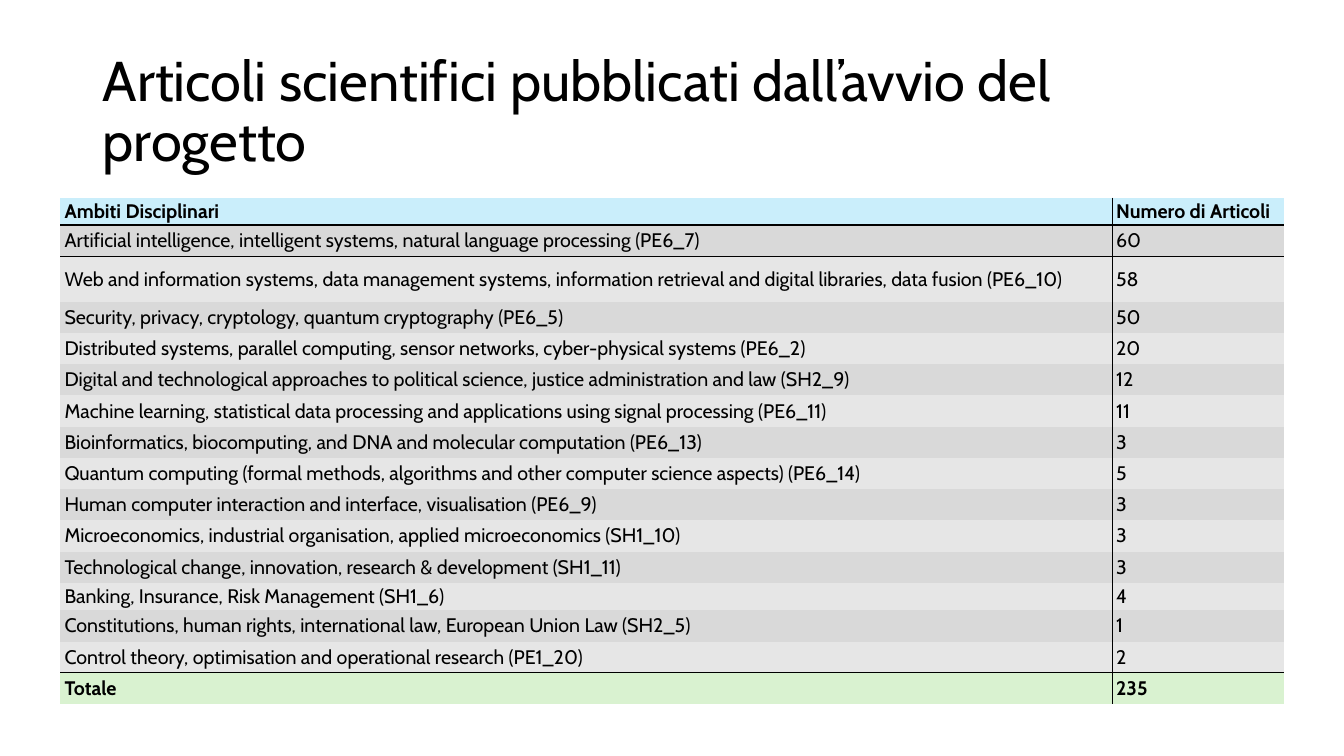
from dataclasses import dataclass

from lxml import etree
from pptx import Presentation
from pptx import util as u
from pptx.dml.color import RGBColor
from pptx.enum import text
from pptx.oxml.ns import qn


@dataclass(frozen=True)
class Theme:
    font: str = "Cabin"
    title_size: int = 40
    table_size: int = 14
    ink: str = "000000"
    header: str = "CAEEFB"
    bands: tuple = ("D9D9D9", "E6E6E6")
    total: str = "D9F2D0"


NO_STYLE = "{2D5ABB26-0587-4C30-8999-92F81FD0307C}"
TITLE = "Articoli scientifici pubblicati dall’avvio del progetto"
HEADER = ("Ambiti Disciplinari", "Numero di Articoli")
TOTAL = ("Totale", "235")
ARTICLES = [
    ("Artificial intelligence, intelligent systems, natural language processing (PE6_7)", 60),
    ("Web and information systems, data management systems, information retrieval"
     " and digital libraries, data fusion (PE6_10)", 58),
    ("Security, privacy, cryptology, quantum cryptography (PE6_5)", 50),
    ("Distributed systems, parallel computing, sensor networks, cyber-physical systems (PE6_2)", 20),
    ("Digital and technological approaches to political science, justice administration"
     " and law (SH2_9)", 12),
    ("Machine learning, statistical data processing and applications using signal processing"
     " (PE6_11)", 11),
    ("Bioinformatics, biocomputing, and DNA and molecular computation (PE6_13)", 3),
    ("Quantum computing (formal methods, algorithms and other computer science aspects)"
     " (PE6_14)", 5),
    ("Human computer interaction and interface, visualisation (PE6_9)", 3),
    ("Microeconomics, industrial organisation, applied microeconomics (SH1_10)", 3),
    ("Technological change, innovation, research & development (SH1_11)", 3),
    ("Banking, Insurance, Risk Management (SH1_6)", 4),
    ("Constitutions, human rights, international law, European Union Law (SH2_5)", 1),
    ("Control theory, optimisation and operational research (PE1_20)", 2),
]
COLUMN_WIDTHS = (10.43, 1.71)
ROW_HEIGHT = 0.31
SPECIAL_HEIGHTS = {0: 0.18, 2: 0.45, 12: 0.18}


def write(frame, content, *, font, size, color, bold=False, line_spacing=None):
    paragraph = frame.paragraphs[0]
    paragraph.line_spacing = line_spacing
    run = paragraph.add_run()
    run.text = content
    run.font.name = font
    run.font.size = u.Pt(size)
    run.font.bold = bold
    run.font.color.rgb = RGBColor.from_string(color)


def add_borders(cell, sides, color):
    """Draw 1 pt lines on the sides given, as letters in the order L, R, T, B."""
    properties = cell._tc.get_or_add_tcPr()
    for position, side in enumerate(sides):
        line = etree.Element(qn(f"a:ln{side}"), w=str(u.Pt(1)))
        fill = etree.SubElement(line, qn("a:solidFill"))
        etree.SubElement(fill, qn("a:srgbClr"), val=color)
        properties.insert(position, line)


class SlideBuilder:
    def __init__(self, slide, theme):
        self.slide = slide
        self.theme = theme

    def title(self, content, left, top, width, height):
        box = self.slide.shapes.add_textbox(*map(u.Inches, (left, top, width, height)))
        frame = box.text_frame
        frame.word_wrap = True
        frame.vertical_anchor = text.MSO_ANCHOR.MIDDLE
        write(frame, content, font=self.theme.font, size=self.theme.title_size,
              color=self.theme.ink, line_spacing=0.9)

    def cell(self, cell, content, fill, bold, borders):
        cell.margin_left = cell.margin_right = u.Inches(0.04)
        cell.margin_top = cell.margin_bottom = u.Inches(0.02)
        cell.vertical_anchor = text.MSO_ANCHOR.MIDDLE
        cell.fill.solid()
        cell.fill.fore_color.rgb = RGBColor.from_string(fill)
        add_borders(cell, borders, self.theme.ink)
        write(cell.text_frame, content, font=self.theme.font,
              size=self.theme.table_size, color=self.theme.ink, bold=bold)

    def table(self, rows, left, top):
        """Fill a table whose first row is the header and last row the total."""
        heights = [SPECIAL_HEIGHTS.get(i, ROW_HEIGHT) for i in range(len(rows))]
        frame = self.slide.shapes.add_table(
            len(rows), len(COLUMN_WIDTHS), u.Inches(left), u.Inches(top),
            u.Inches(sum(COLUMN_WIDTHS)), u.Inches(sum(heights)))
        table = frame.table
        table.horz_banding = False
        next(frame.element.iter(qn("a:tableStyleId"))).text = NO_STYLE
        for column, width in zip(table.columns, COLUMN_WIDTHS):
            column.width = u.Inches(width)

        last = len(rows) - 1
        for i, values in enumerate(rows):
            table.rows[i].height = u.Inches(heights[i])
            fill = {0: self.theme.header, last: self.theme.total}.get(
                i, self.theme.bands[(i - 1) % 2])
            above = "T" if i in (1, last) else ""
            below = "B" if i in (0, last - 1) else ""
            for j, value in enumerate(values):
                self.cell(table.cell(i, j), str(value), fill, i in (0, last),
                          "RL"[j] + above + below)


def main():
    presentation = Presentation()
    presentation.slide_width = u.Inches(13.33)
    presentation.slide_height = u.Inches(7.5)
    slide = presentation.slides.add_slide(presentation.slide_layouts[6])
    builder = SlideBuilder(slide, Theme())
    builder.title(TITLE, 0.92, 0.4, 11.5, 1.45)
    builder.table([HEADER, *ARTICLES, TOTAL], 0.6, 1.96)
    presentation.save("out.pptx")


if __name__ == "__main__":
    main()
